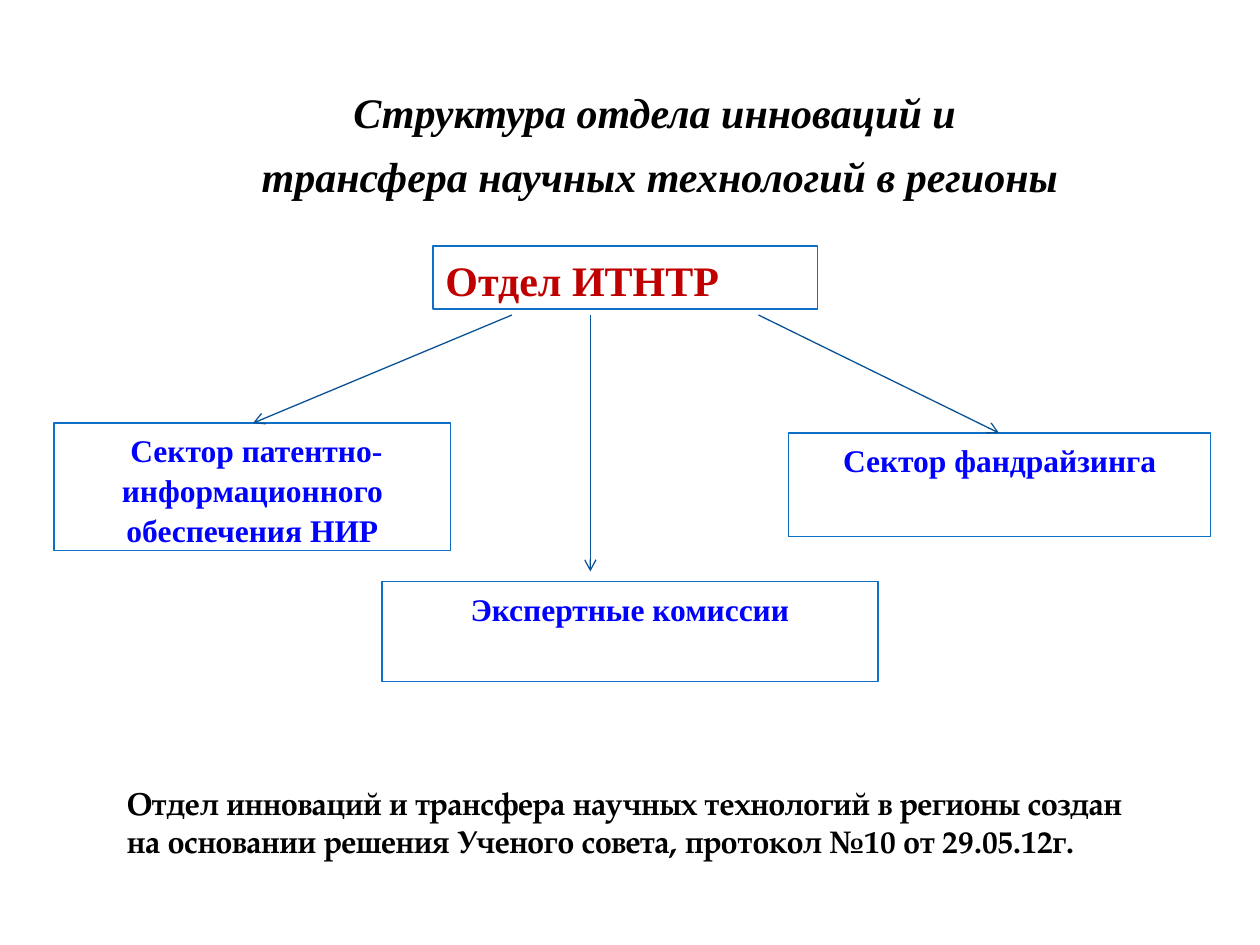
import dataclasses
import typing

import pptx
import pptx.dml.color
import pptx.enum.shapes
import pptx.enum.text
import pptx.oxml
import pptx.oxml.ns
import pptx.util

Cm = pptx.util.Cm
Pt = pptx.util.Pt
RGBColor = pptx.dml.color.RGBColor
Align = pptx.enum.text.PP_ALIGN

BLACK = RGBColor(0x00, 0x00, 0x00)
RED = RGBColor(0xC0, 0x00, 0x00)
BLUE = RGBColor(0x00, 0x00, 0xFF)
BORDER = RGBColor(0x0F, 0x6F, 0xC6)
ARROW = RGBColor(0x09, 0x52, 0x95)
SERIF = "Times New Roman"
LINE_WIDTH = Pt(0.75)

FRAME_FORMAT = {
    "word_wrap": True,
    "auto_size": pptx.enum.text.MSO_AUTO_SIZE.NONE,
    "vertical_anchor": pptx.enum.text.MSO_ANCHOR.TOP,
    "margin_left": Cm(0.25),
    "margin_right": Cm(0.25),
    "margin_top": Cm(0.13),
    "margin_bottom": Cm(0.13),
}


@dataclasses.dataclass(frozen=True)
class Area:
    left: float
    top: float
    width: float
    height: float


@dataclasses.dataclass(frozen=True)
class TextStyle:
    size: float
    color: RGBColor
    align: Align = Align.CENTER
    name: str = SERIF
    italic: bool = False
    line_spacing: float = 1.05


@dataclasses.dataclass(frozen=True)
class Unit:
    text: str
    area: Area
    style: TextStyle


@dataclasses.dataclass(frozen=True)
class Arrow:
    start: tuple[float, float]
    end: tuple[float, float]


TITLE_STYLE = TextStyle(24, BLACK, italic=True)
HEAD_STYLE = TextStyle(24, RED, Align.LEFT)
SECTOR_STYLE = TextStyle(18, BLUE)
NOTE_STYLE = TextStyle(18, BLACK, Align.LEFT, "TeX Gyre Pagella", line_spacing=1.0)

TITLE_AREA = Area(2.39, 1.57, 21.82, 2.51)
TITLE_LINES = ["Структура отдела инноваций и ", "трансфера научных технологий в регионы"]
NOTE_AREA = Area(2.31, 15.67, 21.0, 1.8)
NOTE = (
    "Отдел инноваций и трансфера научных технологий в регионы создан "
    "на основании решения Ученого совета, протокол №10 от 29.05.12г."
)
UNITS = [
    Unit("Отдел ИТНТР", Area(8.73, 4.96, 7.75, 1.27), HEAD_STYLE),
    Unit(
        " Сектор патентно-информационного обеспечения НИР",
        Area(1.09, 8.53, 8.0, 2.57),
        SECTOR_STYLE,
    ),
    Unit("Сектор фандрайзинга", Area(15.9, 8.73, 8.51, 2.09), SECTOR_STYLE),
    Unit("Экспертные комиссии", Area(7.7, 11.73, 10.0, 2.01), SECTOR_STYLE),
]
ARROW_TOP = 6.35
ARROWS = [
    Arrow((10.32, ARROW_TOP), (5.1, 8.53)),
    Arrow((11.9, ARROW_TOP), (11.9, 11.52)),
    Arrow((15.29, ARROW_TOP), (20.14, 8.73)),
]


def apply(target: typing.Any, values: dict[str, typing.Any]) -> None:
    for key, value in values.items():
        setattr(target, key, value)


def lengths(area: Area) -> list[int]:
    return [Cm(value) for value in dataclasses.astuple(area)]


def write(box: typing.Any, lines: list[str], style: TextStyle) -> None:
    frame = box.text_frame
    apply(frame, FRAME_FORMAT)
    for index, line in enumerate(lines):
        para = frame.add_paragraph() if index else frame.paragraphs[0]
        apply(para, {
            "alignment": style.align,
            "line_spacing": style.line_spacing,
            "space_before": Pt(6 if index else 0),
        })
        span = para.add_run()
        span.text = line
        apply(span.font, {
            "name": style.name,
            "size": Pt(style.size),
            "bold": True,
            "italic": style.italic,
        })
        span.font.color.rgb = style.color


def draw_unit(page: typing.Any, unit: Unit) -> None:
    box = page.shapes.add_shape(
        pptx.enum.shapes.MSO_SHAPE.RECTANGLE, *lengths(unit.area)
    )
    box.shadow.inherit = False
    box.fill.background()
    box.line.color.rgb = BORDER
    box.line.width = LINE_WIDTH
    write(box, [unit.text], unit.style)


def draw_arrow(page: typing.Any, arrow: Arrow) -> None:
    points = [Cm(value) for value in arrow.start + arrow.end]
    connector = page.shapes.add_connector(
        pptx.enum.shapes.MSO_CONNECTOR.STRAIGHT, *points
    )
    connector.line.color.rgb = ARROW
    connector.line.width = LINE_WIDTH
    namespace = pptx.oxml.ns.nsdecls("a")
    connector.line._get_or_add_ln().append(
        pptx.oxml.parse_xml(f'<a:tailEnd {namespace} type="arrow"/>')
    )
    connector._element.spPr.append(pptx.oxml.parse_xml(f"<a:effectLst {namespace}/>"))


def main() -> None:
    deck = pptx.Presentation()
    apply(deck, {"slide_width": Cm(25.4), "slide_height": Cm(19.05)})
    page = deck.slides.add_slide(deck.slide_layouts[5])

    title = page.shapes.title
    apply(title, dict(zip(("left", "top", "width", "height"), lengths(TITLE_AREA))))
    write(title, TITLE_LINES, TITLE_STYLE)

    for unit in UNITS:
        draw_unit(page, unit)
    for arrow in ARROWS:
        draw_arrow(page, arrow)

    write(page.shapes.add_textbox(*lengths(NOTE_AREA)), [NOTE], NOTE_STYLE)
    deck.save("out.pptx")


if __name__ == "__main__":
    main()
